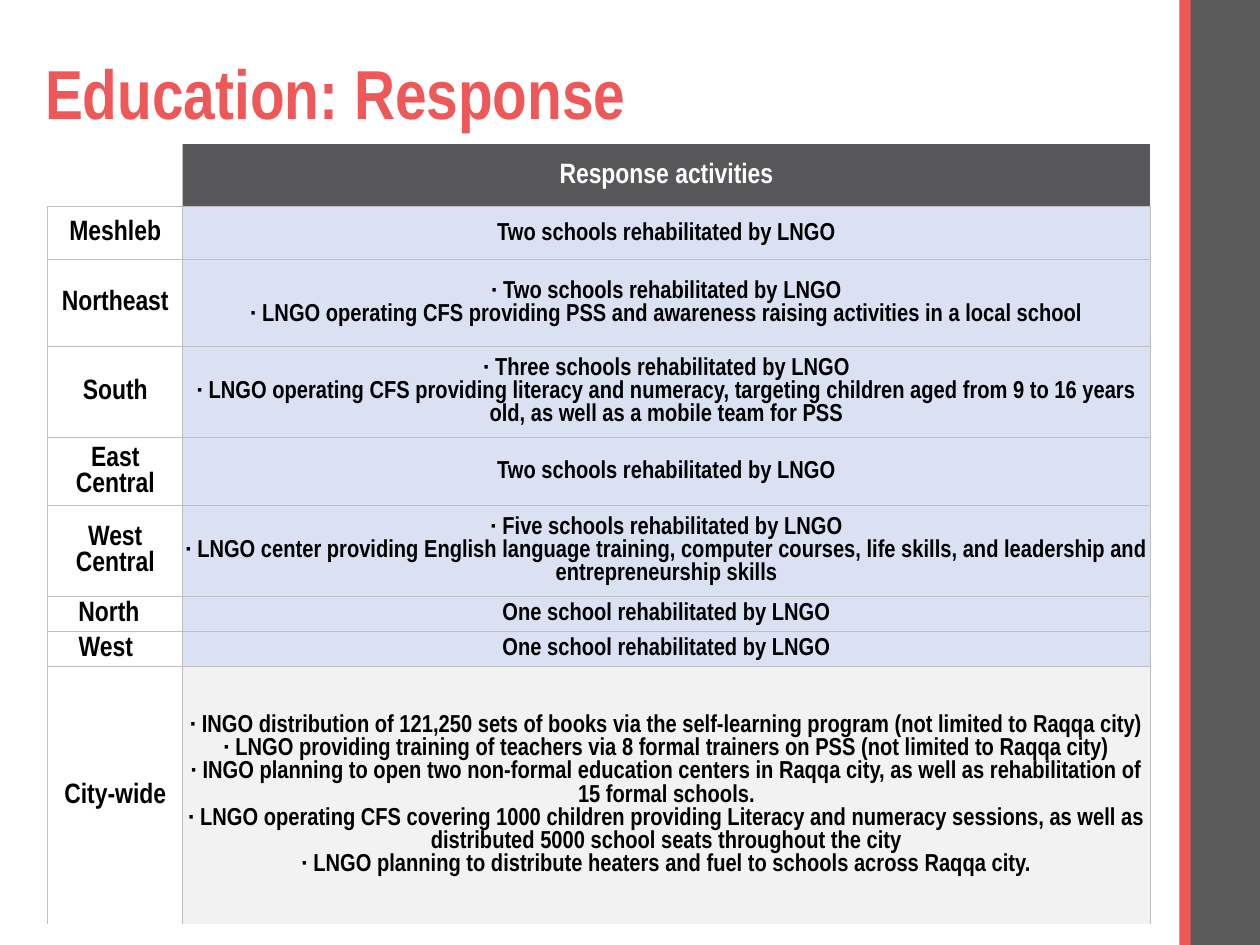
from lxml import etree
from pptx import Presentation
from pptx.dml.color import RGBColor
from pptx.enum.shapes import MSO_SHAPE
from pptx.enum.text import MSO_ANCHOR, PP_ALIGN
from pptx.oxml.ns import qn
from pptx.util import Inches, Pt

CORAL = RGBColor(0xEE, 0x58, 0x59)
GREY = RGBColor(0x5A, 0x5A, 0x5A)
HEADER_GREY = RGBColor(0x58, 0x58, 0x5A)
PALE_BLUE = RGBColor(0xD9, 0xE1, 0xF2)
PALE_GREY = RGBColor(0xF2, 0xF2, 0xF2)
BORDER_GREY = RGBColor(0xBF, 0xBF, 0xBF)
WHITE = RGBColor(0xFF, 0xFF, 0xFF)
BLACK = RGBColor(0, 0, 0)

SLIDE_WIDTH, SLIDE_HEIGHT = 10, 7.5
COLUMN_WIDTHS = (1.07, 7.68)
HEADER_HEIGHT = 0.5
INSET = 0.01
HEADING = {"name": "Arial Narrow", "size": Pt(16), "bold": True}
BODY = {**HEADING, "size": Pt(14)}

# Area, row height, extra right inset of the area label, activities
RESPONSES = [
    ("Meshleb", 0.42, 0, ["Two schools rehabilitated by LNGO"]),
    ("Northeast", 0.69, 0, [
        "· Two schools rehabilitated by LNGO",
        "· LNGO operating CFS providing PSS and awareness raising activities in a local school"]),
    ("South", 0.72, 0, [
        "· Three schools rehabilitated by LNGO",
        "· LNGO operating CFS providing literacy and numeracy, targeting children aged "
        "from 9 to 16 years old, as well as a mobile team for PSS"]),
    ("East Central", 0.54, 0, ["Two schools rehabilitated by LNGO"]),
    ("West Central", 0.72, 0, [
        "· Five schools rehabilitated by LNGO",
        "· LNGO center providing English language training, computer courses, life skills, "
        "and leadership and entrepreneurship skills"]),
    ("North", 0.27, 0.1, ["One school rehabilitated by LNGO"]),
    ("West", 0.27, 0.15, ["One school rehabilitated by LNGO"]),
    ("City-wide", 2.05, 0, [
        "· INGO distribution of 121,250 sets of books via the self-learning program "
        "(not limited to Raqqa city)",
        "· LNGO providing training of teachers via 8 formal trainers on PSS "
        "(not limited to Raqqa city)",
        "· INGO planning to open two non-formal education centers in Raqqa city, "
        "as well as rehabilitation of 15 formal schools.",
        "· LNGO operating CFS covering 1000 children providing Literacy and numeracy sessions, "
        "as well as distributed 5000 school seats throughout the city",
        "· LNGO planning to distribute heaters and fuel to schools across Raqqa city."]),
]


def set_font(font, formats, color):
    for name, value in formats.items():
        setattr(font, name, value)
    font.color.rgb = color


def set_borders(cell, sides):
    """Draw the named sides (L, R, T, B) and hide the others."""
    properties = cell._tc.get_or_add_tcPr()
    for side in "LRTB":
        line = etree.SubElement(properties, qn(f"a:ln{side}"), w=str(Pt(0.5)))
        if side in sides:
            fill = etree.SubElement(line, qn("a:solidFill"))
            etree.SubElement(fill, qn("a:srgbClr"), val=str(BORDER_GREY))
        else:
            etree.SubElement(line, qn("a:noFill"))


def fill_cell(cell, sides, color=None):
    set_borders(cell, sides)
    if color is None:
        cell.fill.background()
    else:
        cell.fill.solid()
        cell.fill.fore_color.rgb = color


def write_cell(cell, lines, formats, color=BLACK, extra_right=0):
    margins = {"margin_left": INSET, "margin_right": INSET + extra_right,
               "margin_top": INSET, "margin_bottom": 0}
    for name, value in margins.items():
        setattr(cell, name, Inches(value))
    cell.vertical_anchor = MSO_ANCHOR.MIDDLE
    paragraph = cell.text_frame.paragraphs[0]
    paragraph.alignment = PP_ALIGN.CENTER
    for index, line in enumerate(lines):
        if index:
            paragraph.add_line_break()
        run = paragraph.add_run()
        run.text = line
        set_font(run.font, formats, color)


def add_side_band(slide, left, width, height):
    """Grey band with a coral strip over its left edge."""
    strip = 0.09
    for x, bar_width, color in ((left, width, GREY), (left - strip + 0.02, strip, CORAL)):
        bar = slide.shapes.add_shape(MSO_SHAPE.RECTANGLE, Inches(x), 0,
                                     Inches(bar_width), Inches(height))
        bar.shadow.inherit = False
        bar.fill.solid()
        bar.fill.fore_color.rgb = color
        bar.line.fill.background()


def add_title(slide, left, top, width, height):
    box = slide.shapes.add_textbox(*map(Inches, (left, top, width, height)))
    frame = box.text_frame
    frame.word_wrap = True
    frame.vertical_anchor = MSO_ANCHOR.MIDDLE
    paragraph = frame.paragraphs[0]
    paragraph.line_spacing = 0.9
    run = paragraph.add_run()
    run.text = "Education: Response"
    set_font(run.font, {**HEADING, "size": Pt(39.6)}, CORAL)


def add_response_table(slide, left, top):
    heights = [HEADER_HEIGHT] + [response[1] for response in RESPONSES]
    frame = slide.shapes.add_table(
        len(heights), len(COLUMN_WIDTHS), Inches(left), Inches(top),
        Inches(sum(COLUMN_WIDTHS)), Inches(sum(heights)))
    table = frame.table
    table.first_row = table.horz_banding = False
    for column, width in zip(table.columns, COLUMN_WIDTHS):
        column.width = Inches(width)
    for row, height in zip(table.rows, heights):
        row.height = Inches(height)

    # Header row
    fill_cell(table.cell(0, 0), "RB")
    fill_cell(table.cell(0, 1), "LB", HEADER_GREY)
    write_cell(table.cell(0, 1), ["Response activities"], HEADING, WHITE)

    # One row per area; the last one is grey and open at the bottom
    for row, (area, _, extra_right, activities) in enumerate(RESPONSES, 1):
        last = row == len(RESPONSES)
        sides = "LRT" if last else "LRTB"
        label, detail = table.cell(row, 0), table.cell(row, 1)
        fill_cell(label, sides)
        write_cell(label, [area], HEADING, extra_right=extra_right)
        fill_cell(detail, sides, PALE_GREY if last else PALE_BLUE)
        write_cell(detail, activities, BODY)


def main():
    presentation = Presentation()
    presentation.slide_width = Inches(SLIDE_WIDTH)
    presentation.slide_height = Inches(SLIDE_HEIGHT)
    slide = presentation.slides.add_slide(presentation.slide_layouts[6])
    add_side_band(slide, 9.43, 0.57, SLIDE_HEIGHT)
    add_title(slide, 0.26, 0.4, 8.69, 0.74)
    add_response_table(slide, 0.38, 1.14)
    presentation.save("out.pptx")


if __name__ == "__main__":
    main()
